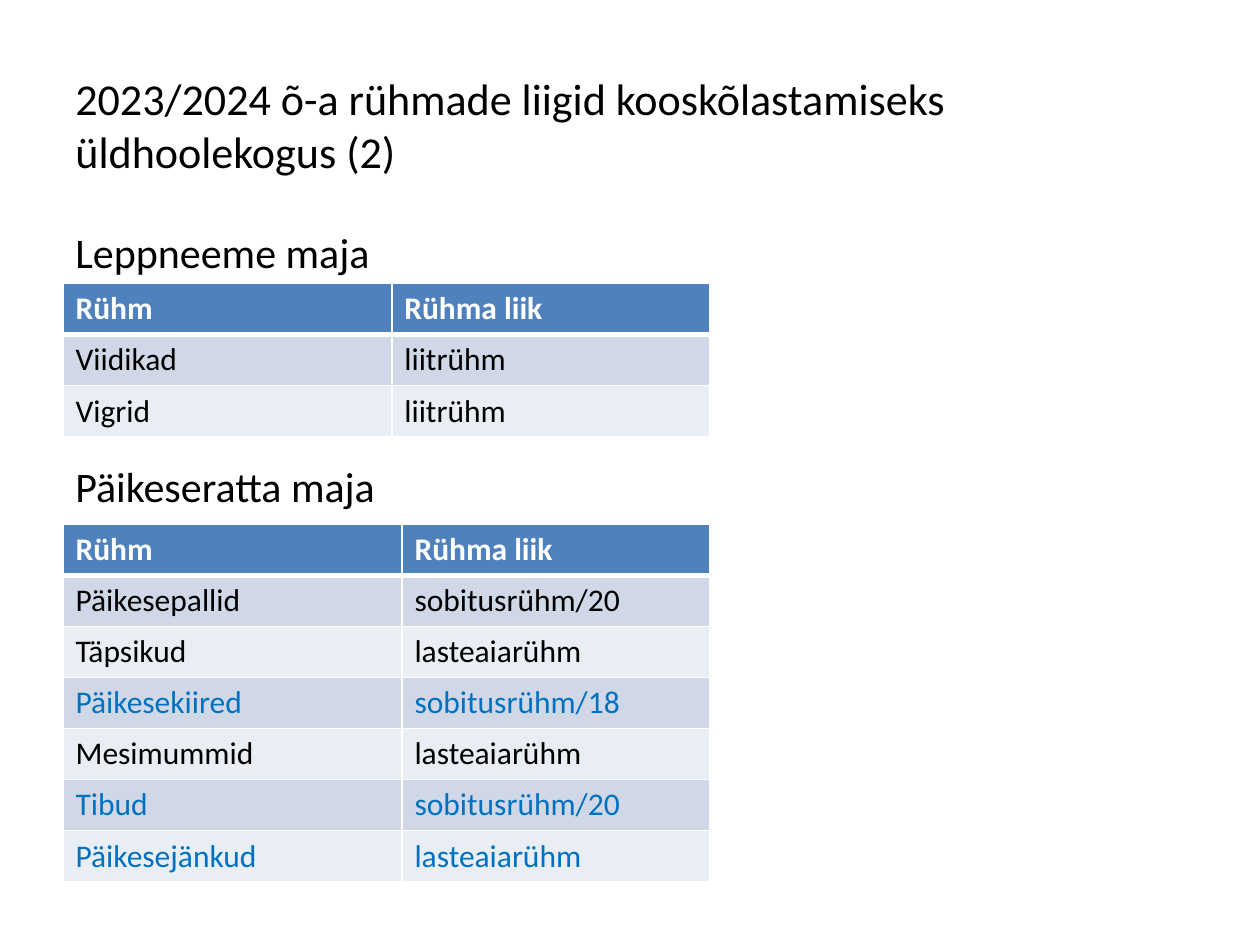
from dataclasses import dataclass

from lxml import etree
from pptx import Presentation
from pptx.dml.color import RGBColor
from pptx.enum.text import MSO_ANCHOR
from pptx.oxml.ns import qn
from pptx.util import Pt

MIDDLE = MSO_ANCHOR.MIDDLE
TOP = MSO_ANCHOR.TOP

FONT = "Calibri"
WHITE = "FFFFFF"
BLACK = "000000"
BLUE = "0070C0"
HEADER_FILL = "4F81BD"
BAND_FILLS = ("D0D8E8", "E9EDF4")
HEADER = ("Rühm", "Rühma liik")
LEFT = 36
ROW_HEIGHT = 29.2


@dataclass
class Group:
    name: str
    kind: str
    color: str = BLACK


@dataclass
class GroupTable:
    top: float
    widths: tuple[float, float]
    groups: list[Group]


@dataclass
class TextBlock:
    top: float
    height: float
    size: float
    lines: list[str]
    anchor: MSO_ANCHOR = TOP
    margin_top: float = 3.6
    gap: float = 0


TEXTS = [
    TextBlock(21.6, 84.24, 25.2,
              ["2023/2024 õ-a rühmade liigid kooskõlastamiseks üldhoolekogus (2)"],
              anchor=MIDDLE, margin_top=18.8),
    TextBlock(126, 356.4, 24, ["Leppneeme maja", "Päikeseratta maja"], gap=105),
]

TABLES = [
    GroupTable(162, (187.9, 181.5), [
        Group("Viidikad", "liitrühm"),
        Group("Vigrid", "liitrühm"),
    ]),
    GroupTable(299.5, (193.7, 175.7), [
        Group("Päikesepallid", "sobitusrühm/20"),
        Group("Täpsikud", "lasteaiarühm"),
        Group("Päikesekiired", "sobitusrühm/18", BLUE),
        Group("Mesimummid", "lasteaiarühm"),
        Group("Tibud", "sobitusrühm/20", BLUE),
        Group("Päikesejänkud", "lasteaiarühm", BLUE),
    ]),
]


def rgb(color: str) -> RGBColor:
    return RGBColor.from_string(color)


def style(para, size: float, color: str, bold: bool = False) -> None:
    para.font.name = FONT
    para.font.size = Pt(size)
    para.font.bold = bold
    para.font.color.rgb = rgb(color)


def add_text(page, block: TextBlock) -> None:
    box = page.shapes.add_textbox(Pt(LEFT), Pt(block.top), Pt(648), Pt(block.height))
    frame = box.text_frame
    frame.word_wrap = True
    frame.vertical_anchor = block.anchor
    frame.margin_top = Pt(block.margin_top)
    frame.text = "\n".join(block.lines)
    for index, para in enumerate(frame.paragraphs):
        style(para, block.size, BLACK)
        if index:
            para.space_before = Pt(block.gap)


def set_borders(cell, top: float, bottom: float) -> None:
    properties = cell._tc.get_or_add_tcPr()
    for side, width in (("L", 1), ("R", 1), ("T", top), ("B", bottom)):
        line = etree.SubElement(properties, qn(f"a:ln{side}"), w=str(Pt(width)))
        fill = etree.SubElement(line, qn("a:solidFill"))
        etree.SubElement(fill, qn("a:srgbClr"), val=WHITE)


def fill_cell(cell, row: int, text: str, color: str) -> None:
    set_borders(cell, top=3 if row == 1 else 1, bottom=3 if row == 0 else 1)
    cell.fill.solid()
    cell.fill.fore_color.rgb = rgb(BAND_FILLS[(row - 1) % 2] if row else HEADER_FILL)
    cell.text = text
    style(cell.text_frame.paragraphs[0], 18, color, bold=row == 0)


def add_group_table(page, data: GroupTable) -> None:
    rows = [Group(*HEADER, WHITE), *data.groups]
    table = page.shapes.add_table(
        len(rows), len(HEADER), Pt(LEFT), Pt(data.top),
        Pt(sum(data.widths)), Pt(ROW_HEIGHT * len(rows))).table
    for column, width in zip(table.columns, data.widths):
        column.width = Pt(width)
    for index, group in enumerate(rows):
        table.rows[index].height = Pt(ROW_HEIGHT)
        for column, text in enumerate((group.name, group.kind)):
            fill_cell(table.cell(index, column), index, text, group.color)


def main() -> None:
    deck = Presentation()
    deck.slide_width, deck.slide_height = Pt(720), Pt(540)
    page = deck.slides.add_slide(deck.slide_layouts[6])
    for block in TEXTS:
        add_text(page, block)
    for data in TABLES:
        add_group_table(page, data)
    deck.save("out.pptx")


if __name__ == "__main__":
    main()
